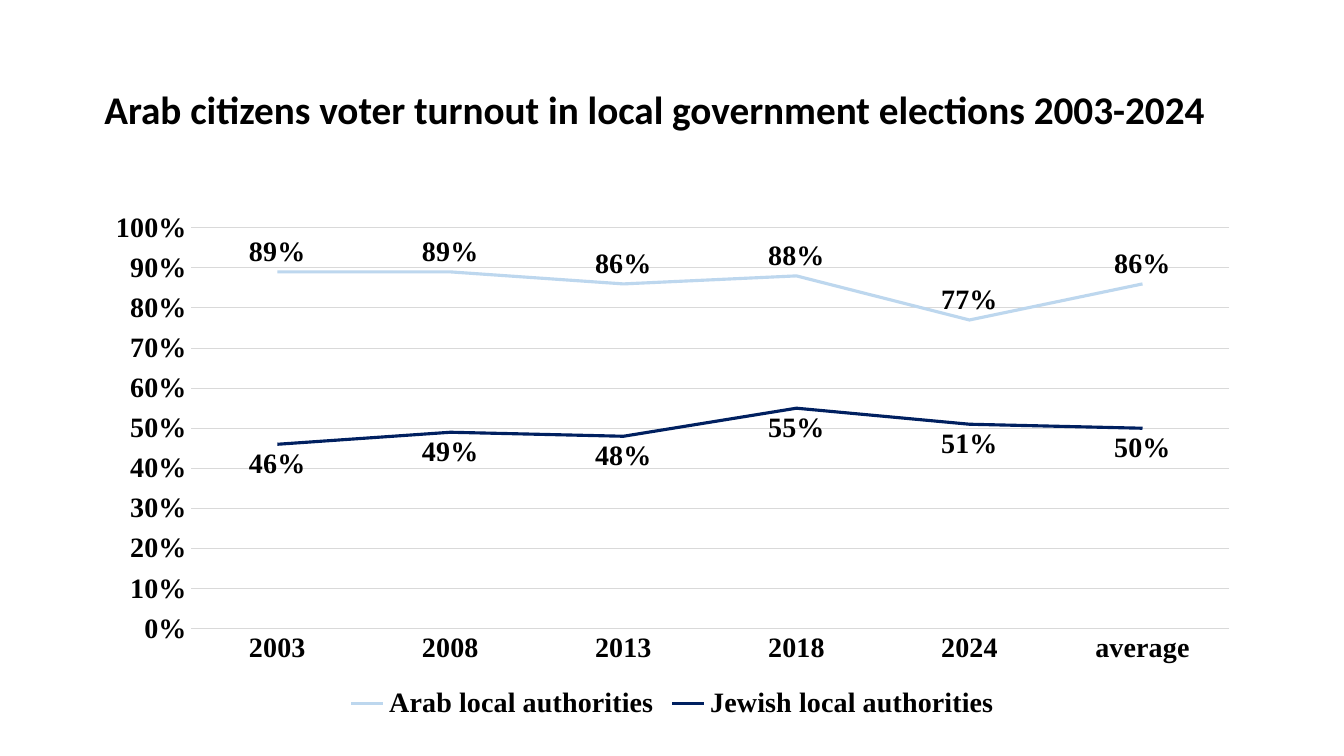
from dataclasses import dataclass

from pptx import Presentation
from pptx.chart.data import CategoryChartData
from pptx.dml.color import RGBColor
from pptx.enum.chart import (XL_CHART_TYPE, XL_LABEL_POSITION,
                             XL_LEGEND_POSITION, XL_MARKER_STYLE,
                             XL_TICK_MARK)
from pptx.enum.text import MSO_ANCHOR, PP_ALIGN
from pptx.util import Inches, Pt

COLORS = {"text": "000000", "grid": "D9D9D9", "arab": "BDD7EE", "jewish": "002060"}
YEARS = ("2003", "2008", "2013", "2018", "2024", "average")
LEFT, WIDTH = Inches(0.92), Inches(11.5)


@dataclass
class Group:
    name: str
    color: str
    place: XL_LABEL_POSITION
    rates: tuple[float, ...]


GROUPS = (
    Group("Arab local authorities", "arab", XL_LABEL_POSITION.ABOVE,
          (0.89, 0.89, 0.86, 0.88, 0.77, 0.86)),
    Group("Jewish local authorities", "jewish", XL_LABEL_POSITION.BELOW,
          (0.46, 0.49, 0.48, 0.55, 0.51, 0.5)),
)


def tint(key: str) -> RGBColor:
    return RGBColor.from_string(COLORS[key])


def set_font(font, face: str, size: int) -> None:
    font.name, font.size, font.bold = face, Pt(size), True
    font.color.rgb = tint("text")


def set_line(line, key: str, width: float) -> None:
    line.color.rgb = tint(key)
    line.width = Pt(width)


def add_title(slide, text: str) -> None:
    frame = slide.shapes.add_textbox(LEFT, Inches(0.2), WIDTH, Inches(1.55)).text_frame
    frame.word_wrap = True
    frame.vertical_anchor = MSO_ANCHOR.MIDDLE
    frame.margin_left, frame.margin_right = Inches(0), Inches(0.36)
    frame.margin_top = Inches(0.31)
    para = frame.paragraphs[0]
    para.alignment = PP_ALIGN.CENTER
    para.line_spacing = 0.9
    run = para.add_run()
    run.text = text
    set_font(run.font, "Calibri", 28)


def style_axes(chart) -> None:
    years, rates = chart.category_axis, chart.value_axis
    for axis in (years, rates):
        axis.major_tick_mark = axis.minor_tick_mark = XL_TICK_MARK.NONE
        set_font(axis.tick_labels.font, "Times New Roman", 20)
    set_line(years.format.line, "grid", 0.75)
    rates.format.line.fill.background()
    rates.minimum_scale, rates.maximum_scale, rates.major_unit = 0, 1, 0.1
    set_line(rates.major_gridlines.format.line, "grid", 0.75)
    rates.tick_labels.number_format = "0%"
    rates.tick_labels.number_format_is_linked = False


def style_series(series, group: Group) -> None:
    series.smooth = False
    series.marker.style = XL_MARKER_STYLE.NONE
    set_line(series.format.line, group.color, 2.25)
    labels = series.data_labels
    labels.show_value = True
    labels.position = group.place
    labels.number_format = "0%"
    labels.number_format_is_linked = False
    set_font(labels.font, "Times New Roman", 20)


def add_turnout(slide) -> None:
    data = CategoryChartData(number_format="0%")
    data.categories = YEARS
    for group in GROUPS:
        data.add_series(group.name, group.rates)
    chart = slide.shapes.add_chart(XL_CHART_TYPE.LINE, LEFT, Inches(2), WIDTH,
                                   Inches(5.19), data).chart
    chart.has_title = False
    set_font(chart.font, "Times New Roman", 20)
    chart.has_legend = True
    chart.legend.position = XL_LEGEND_POSITION.BOTTOM
    chart.legend.include_in_layout = False
    set_font(chart.legend.font, "Times New Roman", 20)
    style_axes(chart)
    plot = chart.plots[0]
    plot.vary_by_categories = False
    for series, group in zip(plot.series, GROUPS):
        style_series(series, group)


def main() -> None:
    deck = Presentation()
    deck.slide_width, deck.slide_height = Inches(13.33), Inches(7.5)
    slide = deck.slides.add_slide(deck.slide_layouts[6])
    add_title(slide, "Arab citizens voter turnout in local government elections 2003-2024")
    add_turnout(slide)
    deck.save("out.pptx")


if __name__ == "__main__":
    main()
